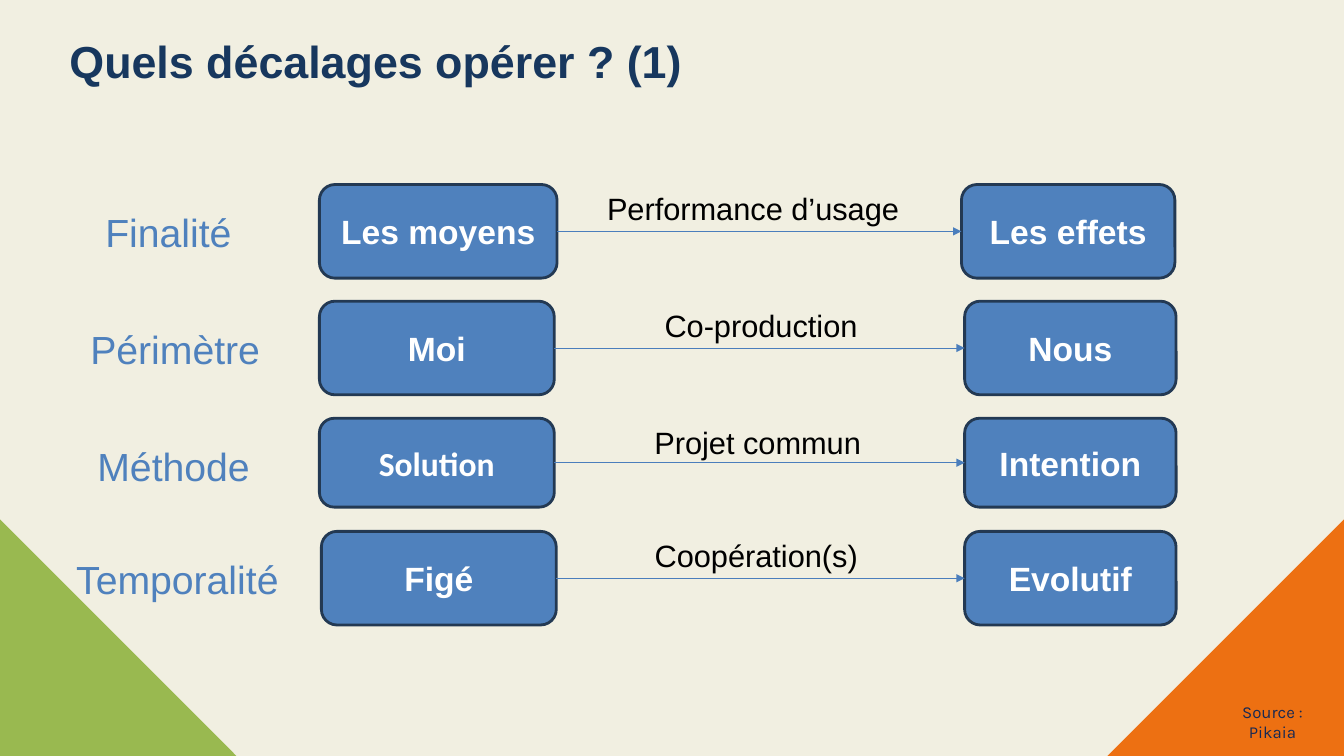
from dataclasses import dataclass

from lxml.etree import SubElement
from pptx import Presentation
from pptx.dml.color import RGBColor
from pptx.enum.shapes import MSO_CONNECTOR as CONN, MSO_SHAPE as SHAPE
from pptx.enum.text import MSO_ANCHOR as ANCHOR, PP_ALIGN as ALIGN
from pptx.oxml.ns import qn
from pptx.util import Cm, Pt

CREAM = RGBColor(0xF1, 0xEF, 0xE1)
GREEN = RGBColor(0x99, 0xB9, 0x50)
ORANGE = RGBColor(0xED, 0x70, 0x12)
BLUE = RGBColor(0x4F, 0x81, 0xBD)
ARROW_BLUE = RGBColor(0x4B, 0x7E, 0xBC)
OUTLINE = RGBColor(0x23, 0x39, 0x53)
TITLE_NAVY = RGBColor(0x17, 0x37, 0x5E)
SOURCE_NAVY = RGBColor(0x18, 0x29, 0x53)
WHITE = RGBColor(0xFF, 0xFF, 0xFF)
BLACK = RGBColor(0, 0, 0)

SLIDE_W, SLIDE_H = 33.87, 19.05
CORNER = 5.96
LABEL_DROP, LABEL_H = 0.42, 1.55
CAPTION_H = 1.19


@dataclass
class Shift:
    """One row; each horizontal span is (left, width) in centimetres."""
    top: float
    height: float
    label: str
    label_span: tuple
    before: str
    before_span: tuple
    caption: str
    caption_span: tuple
    after: str
    after_span: tuple = (24.31, 5.33)
    before_font: str = "Arial"


SHIFTS = [
    Shift(4.65, 2.36, "Finalité", (1.3, 5.89), "Les moyens", (8.05, 5.99),
          "Performance d’usage", (14.99, 7.98), "Les effets", (24.23, 5.38)),
    Shift(7.59, 2.36, "Périmètre", (1.47, 5.89), "Moi", (8.05, 5.92),
          "Co-production", (16.46, 5.44), "Nous"),
    Shift(10.54, 2.24, "Méthode", (-0.03, 8.81), "Solution", (8.05, 5.92),
          "Projet commun", (16.2, 5.79), "Intention", before_font="Calibri"),
    Shift(13.39, 2.36, "Temporalité", (0.81, 7.32), "Figé", (8.1, 5.92),
          "Coopération(s)", (16.2, 5.72), "Evolutif"),
]


def write(tf, text, size, color, bold=False, font="Arial", align=ALIGN.CENTER):
    p = tf.paragraphs[0]
    p.alignment = align
    r = p.add_run()
    r.text = text
    r.font.name, r.font.size, r.font.bold = font, Pt(size), bold
    r.font.color.rgb = color
    return p


def add_text(s, left, top, width, height, margins=(0.25, 0.13),
             wrap=True, anchor=ANCHOR.TOP):
    """Add an empty text box; margins are (sides, top and bottom)."""
    tf = s.shapes.add_textbox(Cm(left), Cm(top), Cm(width), Cm(height)).text_frame
    tf.word_wrap, tf.vertical_anchor = wrap, anchor
    tf.margin_left = tf.margin_right = Cm(margins[0])
    tf.margin_top = tf.margin_bottom = Cm(margins[1])
    return tf


def add_corner(s, points, color):
    (x, y), *rest = [(Cm(px), Cm(py)) for px, py in points]
    builder = s.shapes.build_freeform(x, y)
    builder.add_line_segments(rest, close=True)
    sp = builder.convert_to_shape()
    sp.shadow.inherit = False
    sp.fill.solid()
    sp.fill.fore_color.rgb = color
    sp.line.fill.background()


def add_box(s, span, row, text, font="Arial"):
    left, width = span
    sp = s.shapes.add_shape(SHAPE.ROUNDED_RECTANGLE, Cm(left), Cm(row.top),
                            Cm(width), Cm(row.height))
    sp.shadow.inherit = False
    sp.fill.solid()
    sp.fill.fore_color.rgb = BLUE
    sp.line.color.rgb, sp.line.width = OUTLINE, Pt(2)
    sp.text_frame.vertical_anchor = ANCHOR.MIDDLE
    write(sp.text_frame, text, 24, WHITE, bold=True, font=font)
    return sp


def add_arrow(s, start, end):
    """Link the right side of start to the left side of end."""
    arrow = s.shapes.add_connector(CONN.STRAIGHT, 0, 0, 0, 0)
    arrow.begin_connect(start, 3)
    arrow.end_connect(end, 1)
    arrow.line.color.rgb, arrow.line.width = ARROW_BLUE, Pt(0.75)
    SubElement(arrow.line._get_or_add_ln(), qn("a:tailEnd"), type="triangle")
    SubElement(arrow._element.spPr, qn("a:effectLst"))


def add_shift(s, row):
    before = add_box(s, row.before_span, row, row.before, row.before_font)
    after = add_box(s, row.after_span, row, row.after)
    add_arrow(s, before, after)

    left, width = row.caption_span
    caption = add_text(s, left, row.top, width, CAPTION_H, wrap=False)
    write(caption, row.caption, 22, BLACK)

    left, width = row.label_span
    label = add_text(s, left, row.top + LABEL_DROP, width, LABEL_H, (0.33, 0.18))
    write(label, row.label, 28, BLUE)


def main():
    prs = Presentation()
    prs.slide_width, prs.slide_height = Cm(SLIDE_W), Cm(SLIDE_H)
    s = prs.slides.add_slide(prs.slide_layouts[6])
    s.background.fill.solid()
    s.background.fill.fore_color.rgb = CREAM

    for edge, inner, color in ((0, CORNER, GREEN),
                               (SLIDE_W, SLIDE_W - CORNER, ORANGE)):
        add_corner(s, [(edge, SLIDE_H - CORNER), (inner, SLIDE_H),
                       (edge, SLIDE_H)], color)

    for row in SHIFTS:
        add_shift(s, row)

    source = add_text(s, 30.8, 17.7, 2.54, 1, (0, 0), anchor=ANCHOR.BOTTOM)
    write(source, "Source : Pikaia", 12, SOURCE_NAVY, font="Karla")

    title = add_text(s, 1.5, 0.71, 27.97, 1.8, anchor=ANCHOR.MIDDLE)
    p = write(title, "Quels décalages opérer ? (1)", 32, TITLE_NAVY,
              bold=True, align=ALIGN.LEFT)
    p.line_spacing = 0.9

    prs.save("out.pptx")


if __name__ == "__main__":
    main()
